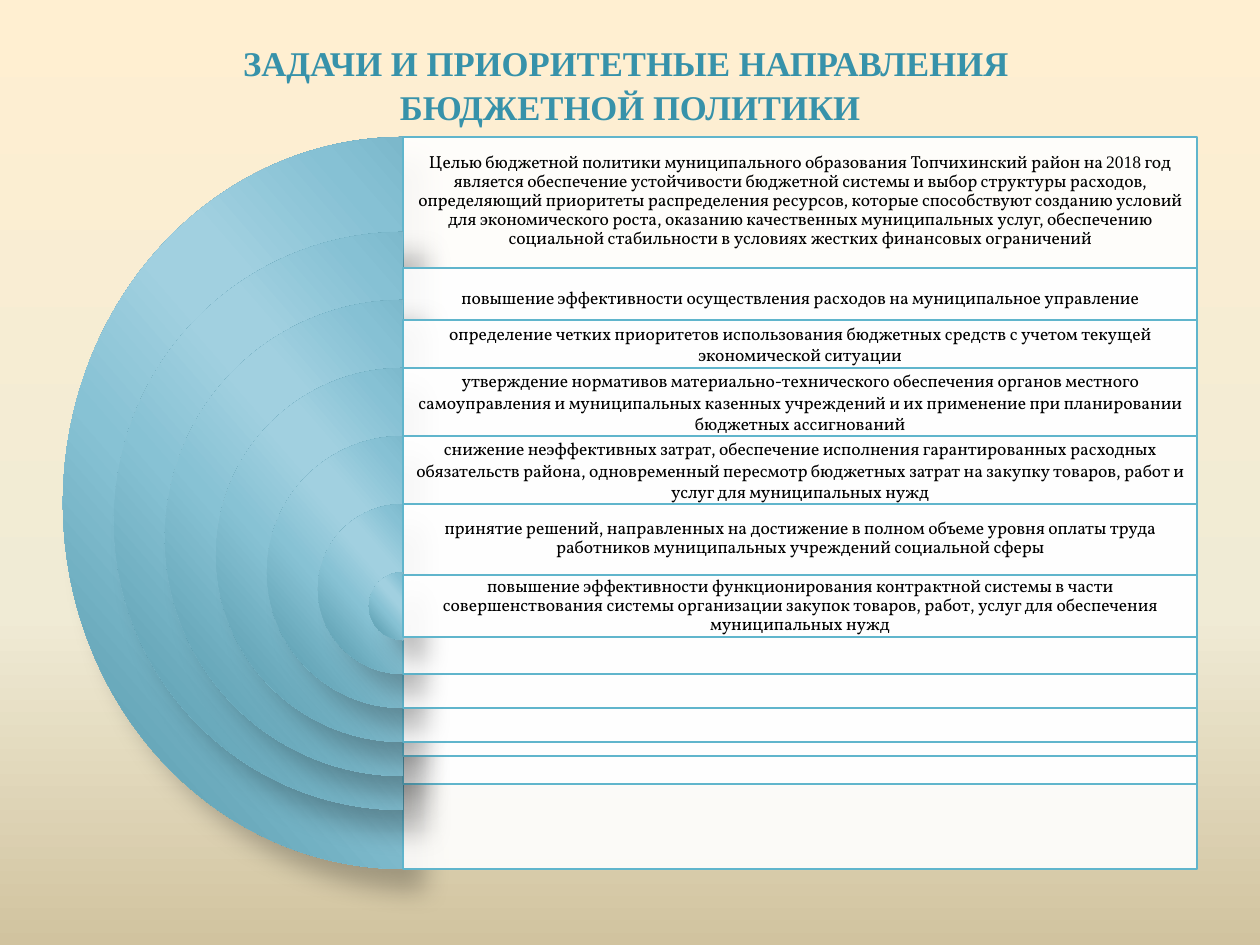
from lxml.etree import SubElement
from pptx import Presentation
from pptx.dml.color import RGBColor
from pptx.enum.shapes import MSO_SHAPE as SHAPE
from pptx.enum.text import MSO_ANCHOR as ANCHOR, PP_ALIGN as ALIGN
from pptx.oxml.ns import qn
from pptx.util import Emu, Pt

SERIF, BODY = "Times New Roman", "Vollkorn"
CENTER_X, PANEL_WIDTH = 403, 794
PIE_STOPS = [(0, "4D91A3"), (33, "86C1D4"), (47, "A1D0E0"),
             (53, "A1D0E0"), (68, "87C2D4"), (100, "4D91A3")]
SKY_STOPS = [(0, "FFEFD1"), (65, "F0EBD5"), (100, "D1C39F")]

# Text, panel top, panel bottom, text height, line spacing
GOALS = [
    ("Целью бюджетной политики муниципального образования Топчихинский район на 2018 год "
     "является обеспечение устойчивости бюджетной системы и выбор структуры расходов, "
     "определяющий приоритеты распределения ресурсов, которые способствуют созданию условий "
     "для экономического роста, оказанию качественных муниципальных услуг, обеспечению "
     "социальной стабильности в условиях жестких финансовых ограничений", 137, 869, 128, 0.9),
    ("повышение эффективности осуществления расходов на муниципальное управление",
     268, 784, 60, 1),
    ("определение четких приоритетов использования бюджетных средств с учетом текущей "
     "экономической ситуации", 320, 756, 48, 1),
    ("утверждение нормативов материально-технического обеспечения органов местного "
     "самоуправления и муниципальных казенных учреждений и их применение при планировании "
     "бюджетных ассигнований", 368, 742, 68, 1),
    ("снижение неэффективных затрат, обеспечение исполнения гарантированных расходных "
     "обязательств района, одновременный пересмотр бюджетных затрат на закупку товаров, "
     "работ и услуг для муниципальных нужд", 436, 708, 68, 1),
    ("принятие решений, направленных на достижение в полном объеме уровня оплаты труда "
     "работников муниципальных учреждений социальной сферы", 504, 674, 68, 0.9),
    ("повышение эффективности функционирования контрактной системы в части "
     "совершенствования системы организации закупок товаров, работ, услуг для обеспечения "
     "муниципальных нужд", 575, 637, 62, 0.9),
]


def px(n):
    return Emu(round(n * 914400 / 126))


def rgb(value):
    return RGBColor.from_string(value)


def set_attrs(target, values):
    for name, value in values.items():
        setattr(target, name, value)


def set_gradient(fill, element, stops, angle):
    fill.gradient()
    fill.gradient_angle = 360 - angle  # counted counter-clockwise
    stop_list = next(element.iter(qn("a:gsLst")))
    for old in list(stop_list):
        stop_list.remove(old)
    for position, color in stops:
        stop = SubElement(stop_list, qn("a:gs"), pos=str(position * 1000))
        SubElement(stop, qn("a:srgbClr"), val=color)


def add_shadow(shape):
    shape.shadow.inherit = False
    effects = shape._element.spPr.find(qn("a:effectLst"))
    outer = SubElement(effects, qn("a:outerShdw"), blurRad=str(Pt(15)), dist=str(Pt(18)),
                       dir=str(45 * 60000), algn="ctr", rotWithShape="0")
    color = SubElement(outer, qn("a:srgbClr"), val="000000")
    SubElement(color, qn("a:alpha"), val="26000")


def add_half_disc(slide, top, width, height):
    disc = slide.shapes.add_shape(SHAPE.PIE, px(CENTER_X - width / 2), px(top),
                                  px(width), px(height))
    # Left half: from 90 to 270 degrees
    disc.adjustments[0], disc.adjustments[1] = 54, 162
    set_gradient(disc.fill, disc._element.spPr, PIE_STOPS, 139)
    disc.line.fill.background()
    add_shadow(disc)


def add_panel(slide, top, bottom):
    panel = slide.shapes.add_shape(SHAPE.RECTANGLE, px(CENTER_X), px(top),
                                   px(PANEL_WIDTH), px(bottom - top))
    panel.shadow.inherit = False
    panel.fill.solid()
    panel.fill.fore_color.rgb = rgb("FFFFFF")
    white = panel._element.spPr.find(qn("a:solidFill"))[0]
    SubElement(white, qn("a:alpha"), val="90000")
    panel.line.color.rgb = rgb("60B5CC")
    panel.line.width = Pt(0.75)


def add_goal_text(slide, text, top, height, spacing):
    box = slide.shapes.add_textbox(px(CENTER_X), px(top), px(PANEL_WIDTH), px(height))
    frame = box.text_frame
    set_attrs(frame, {"word_wrap": True, "vertical_anchor": ANCHOR.MIDDLE,
                      "margin_left": px(5), "margin_right": px(5),
                      "margin_top": px(5), "margin_bottom": px(5)})
    goal = frame.paragraphs[0]
    set_attrs(goal, {"alignment": ALIGN.CENTER, "line_spacing": spacing})
    # The year is set in a different typeface
    for part in filter(None, text.partition("2018")):
        run = goal.add_run()
        run.text = part
        set_attrs(run.font, {"size": Pt(10), "name": SERIF if part == "2018" else BODY})
        run.font.color.rgb = rgb("000000")


def add_title(slide):
    title = slide.shapes.title
    set_attrs(title, {"left": px(0), "top": px(38), "width": px(1260), "height": px(91)})
    frame = title.text_frame
    frame.text = "ЗАДАЧИ И ПРИОРИТЕТНЫЕ НАПРАВЛЕНИЯ \vБЮДЖЕТНОЙ ПОЛИТИКИ"
    set_attrs(frame, {"word_wrap": True, "vertical_anchor": ANCHOR.MIDDLE})
    heading = frame.paragraphs[0]
    set_attrs(heading, {"alignment": ALIGN.CENTER, "line_spacing": 1.05})
    for run in heading.runs:
        set_attrs(run.font, {"name": SERIF, "size": Pt(19.8), "bold": True})
        run.font.color.rgb = rgb("3792AA")


def add_goals(slide):
    for level, (text, top, bottom, text_height, spacing) in enumerate(GOALS):
        if level == 0:
            add_half_disc(slide, top, 680, bottom - top)
        else:
            size = 578 - 102 * (level - 1)
            add_half_disc(slide, 232 + 68 * (level - 1), size, size)
        add_panel(slide, top, bottom)
        add_goal_text(slide, text, top, text_height, spacing)


def main():
    deck = Presentation()
    deck.slide_width, deck.slide_height = px(1260), px(945)
    slide = deck.slides.add_slide(deck.slide_layouts[5])
    set_gradient(slide.background.fill, slide._element, SKY_STOPS, 90)
    add_title(slide)
    add_goals(slide)
    deck.save("out.pptx")


if __name__ == "__main__":
    main()
